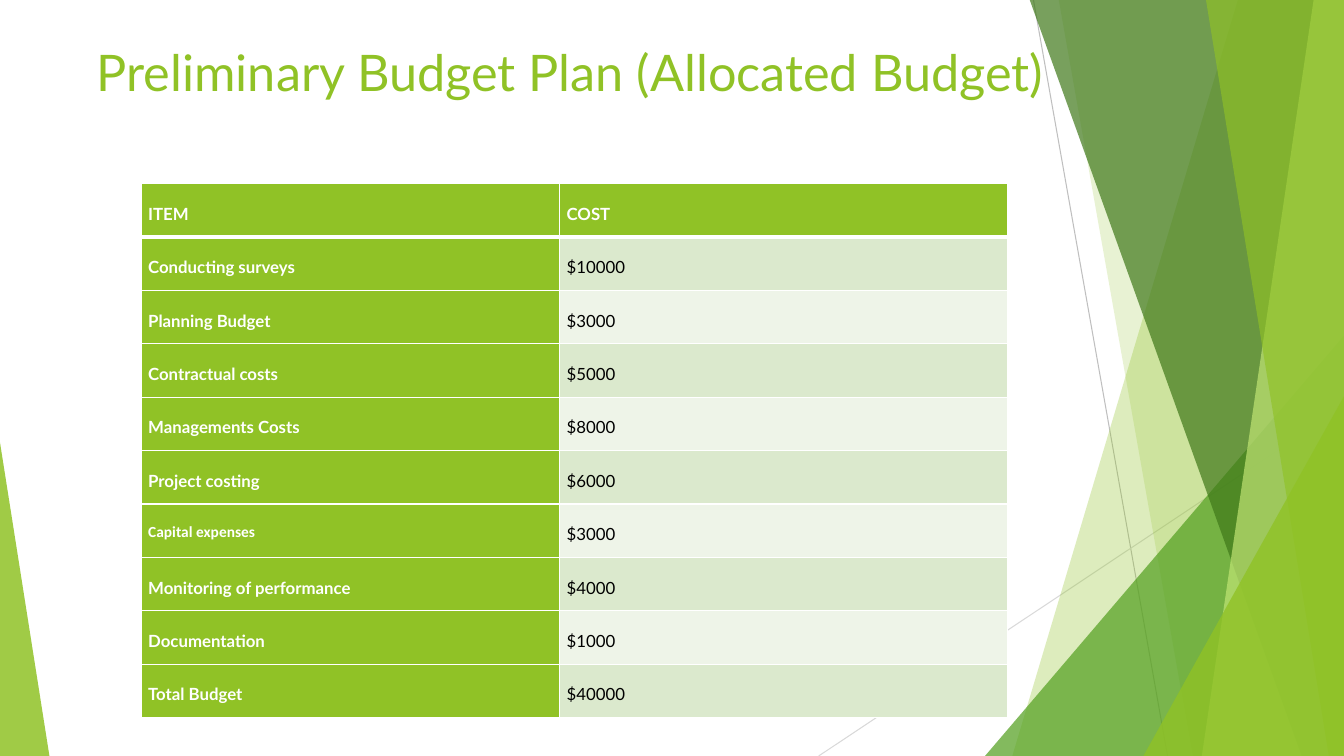
"""Build the preliminary budget plan slide with its faceted green backdrop."""
from dataclasses import dataclass

from lxml import etree
from pptx import Presentation
from pptx.dml.color import RGBColor
from pptx.enum.shapes import MSO_CONNECTOR, MSO_SHAPE
from pptx.enum.text import MSO_ANCHOR, PP_ALIGN
from pptx.oxml.ns import qn
from pptx.shapes.autoshape import Shape
from pptx.slide import Slide
from pptx.table import _Cell
from pptx.util import Inches, Pt

STRAIGHT = MSO_CONNECTOR.STRAIGHT
TRIANGLE = MSO_SHAPE.ISOSCELES_TRIANGLE
TOP = MSO_ANCHOR.TOP
LEFT = PP_ALIGN.LEFT

WHITE = RGBColor(0xFF, 0xFF, 0xFF)
BLACK = RGBColor(0x00, 0x00, 0x00)
LIME = RGBColor(0x90, 0xC2, 0x26)
PALE_LIME = RGBColor(0xC0, 0xE4, 0x74)
GREEN = RGBColor(0x54, 0xA0, 0x21)
DARK_GREEN = RGBColor(0x3F, 0x78, 0x19)
BAND_DARK = RGBColor(0xDB, 0xE9, 0xCD)
BAND_LIGHT = RGBColor(0xEE, 0xF4, 0xE8)
GREY = RGBColor(0xBF, 0xBF, 0xBF)
LIGHT_GREY = RGBColor(0xD9, 0xD9, 0xD9)

SLIDE_WIDTH, SLIDE_HEIGHT = 13.33, 7.5
PANEL_TOP = -0.01
HEADING_FONT = "Lato"
ROW_HEIGHT = 0.53
COLUMN_WIDTHS = (4.15, 4.44)
THIN, THICK = 1, 3


@dataclass(frozen=True)
class Ray:
    """A thin backdrop line."""
    start: tuple[float, float]
    end: tuple[float, float]
    color: RGBColor


@dataclass(frozen=True)
class Panel:
    """A full-height facet reaching the right edge of the slide."""
    top_left: float
    bottom_left: float
    color: RGBColor
    opacity: int


@dataclass(frozen=True)
class Wedge:
    """A right triangle standing on the bottom edge of the slide."""
    left: float
    top: float
    width: float
    apex: float
    color: RGBColor
    opacity: int


@dataclass(frozen=True)
class BudgetLine:
    """One row of the budget table."""
    item: str
    cost: str
    item_font: str = HEADING_FONT
    item_size: int = 12


BACKDROP = (
    Ray((10.25, 0), (11.58, 7.5), GREY),
    Ray((13.33, 4.03), (8.12, 7.5), LIGHT_GREY),
    Panel(12.28, 10.04, LIME, 30),
    Panel(10.5, 11.83, LIME, 20),
    Wedge(9.77, 3.33, 3.56, 1, GREEN, 72),
    Panel(10.21, 12.91, DARK_GREEN, 70),
    Panel(13.03, 11.92, PALE_LIME, 70),
    Panel(11.96, 13.18, LIME, 65),
    Wedge(11.34, 3.93, 1.99, 1, LIME, 80),
    Wedge(0, 4.39, 0.49, 0, LIME, 85),
)

BUDGET = (
    BudgetLine("ITEM", "COST"),
    BudgetLine("Conducting surveys", "$10000"),
    BudgetLine("Planning Budget", "$3000"),
    BudgetLine("Contractual costs", "$5000"),
    BudgetLine("Managements Costs", "$8000"),
    BudgetLine("Project costing", "$6000"),
    BudgetLine("Capital expenses", "$3000", "Calibri", 11),
    BudgetLine("Monitoring of performance", "$4000"),
    BudgetLine("Documentation", "$1000"),
    BudgetLine("Total Budget", "$40000"),
)


def tint(facet: Shape, color: RGBColor, opacity: int) -> None:
    """Give a facet a translucent fill without outline or shadow."""
    facet.shadow.inherit = False
    facet.line.fill.background()
    facet.fill.solid()
    facet.fill.fore_color.rgb = color
    srgb = facet.element.spPr.find(f".//{qn('a:srgbClr')}")
    etree.SubElement(srgb, qn("a:alpha"), val=str(opacity * 1000))


def draw_ray(slide: Slide, ray: Ray) -> None:
    """Draw one thin line."""
    points = (Inches(value) for value in ray.start + ray.end)
    connector = slide.shapes.add_connector(STRAIGHT, *points)
    connector.line.color.rgb = ray.color
    connector.line.width = Pt(0.75)
    etree.SubElement(connector.element.spPr, qn("a:effectLst"))


def draw_panel(slide: Slide, panel: Panel) -> None:
    """Draw one full-height facet."""
    corners = ((SLIDE_WIDTH, PANEL_TOP), (SLIDE_WIDTH, SLIDE_HEIGHT),
               (panel.bottom_left, SLIDE_HEIGHT))
    outline = slide.shapes.build_freeform(Inches(panel.top_left), Inches(PANEL_TOP))
    outline.add_line_segments([(Inches(x), Inches(y)) for x, y in corners])
    tint(outline.convert_to_shape(), panel.color, panel.opacity)


def draw_wedge(slide: Slide, wedge: Wedge) -> None:
    """Draw one right triangle."""
    facet = slide.shapes.add_shape(
        TRIANGLE, Inches(wedge.left), Inches(wedge.top),
        Inches(wedge.width), Inches(SLIDE_HEIGHT - wedge.top))
    facet.adjustments[0] = wedge.apex
    tint(facet, wedge.color, wedge.opacity)


def draw_title(slide: Slide) -> None:
    """Place the title in front of the backdrop."""
    title = slide.shapes.title
    title.left, title.top = Inches(0.86), Inches(0.36)
    title.width, title.height = Inches(11.5), Inches(1.45)
    title.element.getparent().append(title.element)
    frame = title.text_frame
    frame.text = "Preliminary Budget Plan (Allocated Budget)"
    frame.vertical_anchor = TOP
    heading = frame.paragraphs[0]
    heading.alignment = LEFT
    heading.font.name, heading.font.size = HEADING_FONT, Pt(36)
    heading.font.color.rgb = LIME


def set_borders(cell: _Cell, top: int, bottom: int) -> None:
    """Outline a cell in white with the given top and bottom weights."""
    properties = cell._tc.get_or_add_tcPr()
    for side, weight in (("L", THIN), ("R", THIN), ("T", top), ("B", bottom)):
        border = etree.SubElement(properties, qn(f"a:ln{side}"), w=str(Pt(weight)))
        fill = etree.SubElement(border, qn("a:solidFill"))
        etree.SubElement(fill, qn("a:srgbClr"), val=str(WHITE))


def fill_cell(cell: _Cell, text: str, font: str, size: int,
              background: RGBColor, strong: bool) -> None:
    """Write and color one table cell."""
    cell.margin_left = cell.margin_right = Inches(0.07)
    cell.margin_top = cell.margin_bottom = 0
    cell.fill.solid()
    cell.fill.fore_color.rgb = background
    cell.text = text
    paragraph = cell.text_frame.paragraphs[0]
    paragraph.line_spacing = 2.0
    paragraph.font.name, paragraph.font.size = font, Pt(size)
    paragraph.font.bold = strong
    paragraph.font.color.rgb = WHITE if strong else BLACK


def draw_budget(slide: Slide) -> None:
    """Draw the budget table."""
    table = slide.shapes.add_table(
        len(BUDGET), len(COLUMN_WIDTHS), Inches(1.4), Inches(1.82),
        Inches(sum(COLUMN_WIDTHS)), Inches(ROW_HEIGHT * len(BUDGET))).table
    for column, width in zip(table.columns, COLUMN_WIDTHS):
        column.width = Inches(width)
    for index, (row, entry) in enumerate(zip(table.rows, BUDGET)):
        row.height = Inches(ROW_HEIGHT)
        header = index == 0
        band = BAND_DARK if index % 2 else BAND_LIGHT
        item, cost = row.cells
        for cell in (item, cost):
            set_borders(cell, THICK if index == 1 else THIN, THICK if header else THIN)
        fill_cell(item, entry.item, entry.item_font, entry.item_size, LIME, True)
        fill_cell(cost, entry.cost, HEADING_FONT, 12, LIME if header else band, header)


def main() -> None:
    """Assemble and save the slide."""
    deck = Presentation()
    deck.slide_width, deck.slide_height = Inches(SLIDE_WIDTH), Inches(SLIDE_HEIGHT)
    slide = deck.slides.add_slide(deck.slide_layouts[5])
    painters = {Ray: draw_ray, Panel: draw_panel, Wedge: draw_wedge}
    for part in BACKDROP:
        painters[type(part)](slide, part)
    draw_title(slide)
    draw_budget(slide)
    deck.save("out.pptx")


if __name__ == "__main__":
    main()
